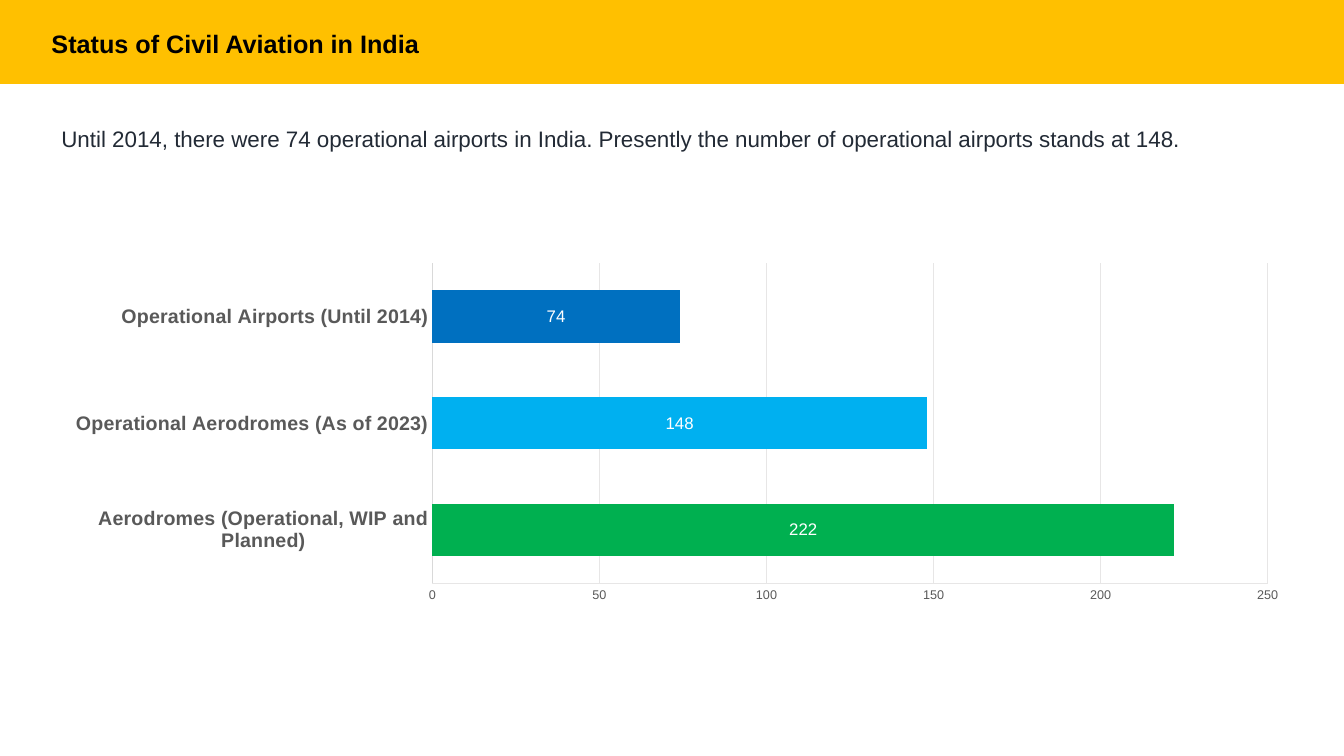
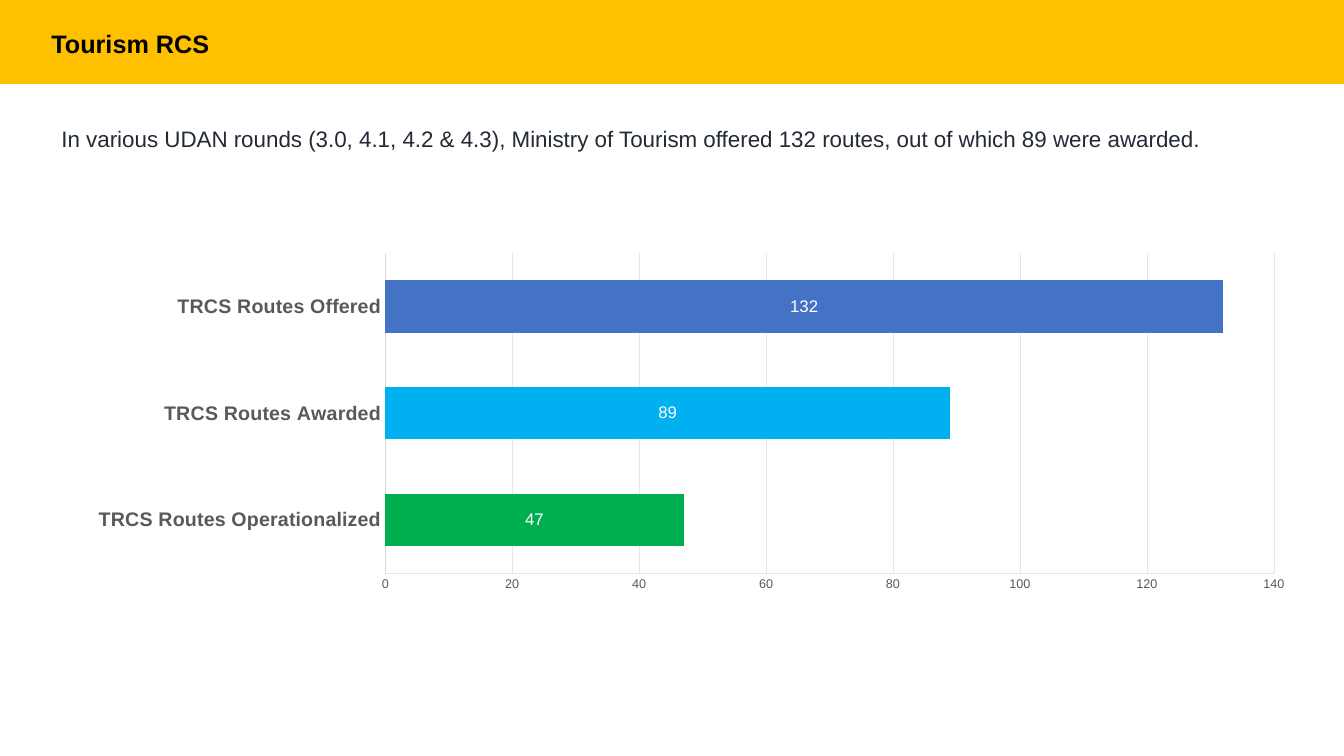
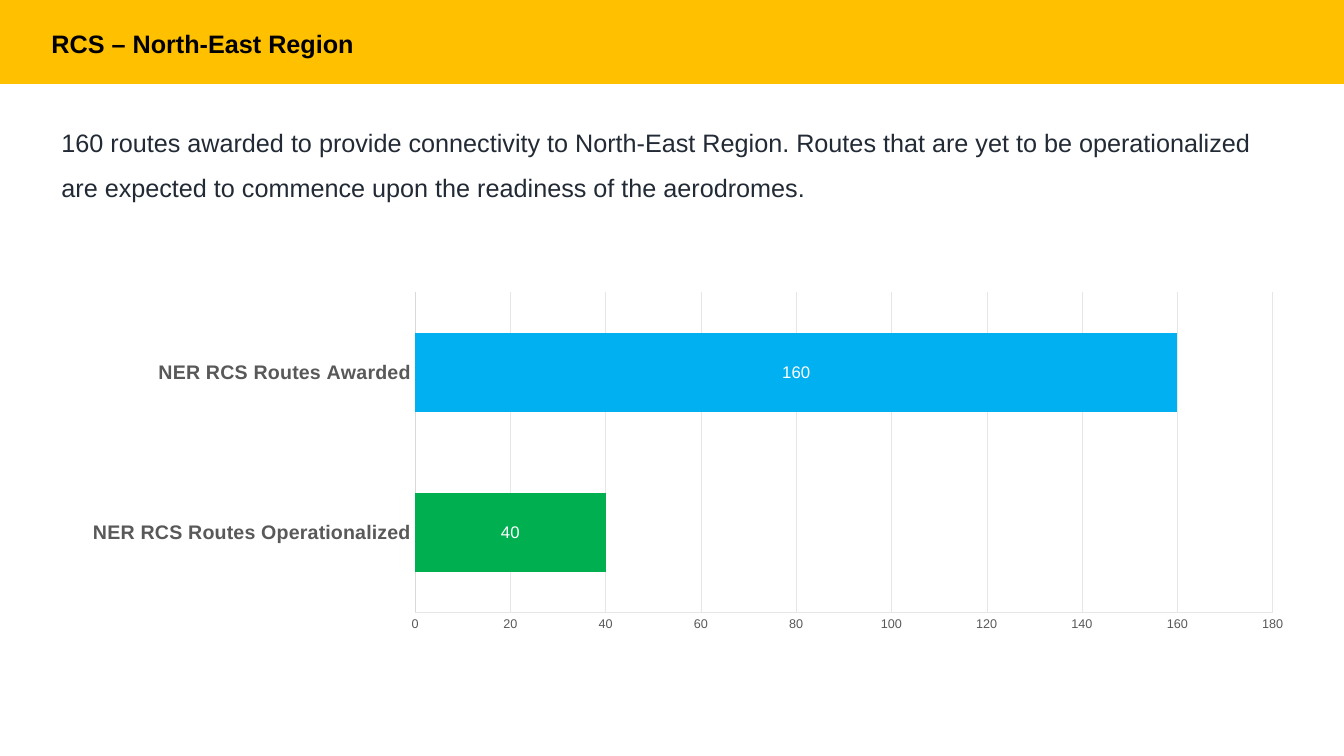
from lxml.etree import SubElement
from pptx import Presentation
from pptx.chart.data import CategoryChartData
from pptx.dml.color import RGBColor
from pptx.enum.chart import XL_CHART_TYPE as ChartType
from pptx.enum.chart import XL_LABEL_POSITION as LabelPosition
from pptx.enum.chart import XL_TICK_MARK as TickMark
from pptx.enum.shapes import MSO_SHAPE as Shape
from pptx.oxml import parse_xml
from pptx.oxml.ns import nsdecls, qn
from pptx.util import Pt

# Shared colours, fonts and measures (points)
GOLD, BLACK, WHITE, INK = "FFC000", "000000", "FFFFFF", "222A35"
GREY, AXIS, GRID = "595959", "D9D9D9", "E7E6E6"
GREEN, SKY, BLUE, INDIGO = "00B050", "00B0F0", "0070C0", "4472C4"

PAGE_WIDTH, PAGE_HEIGHT, BAND_HEIGHT = 960, 540, 60
MARGIN, CONTENT_WIDTH = 36.8, 886.4
TITLE_TOP, TITLE_HEIGHT = 20.2, 54.8
BODY_TOP, CHART_HEIGHT = 76.3, 311
PLOT_TOP, PLOT_HEIGHT = 0.088, 0.736

FONT = "Arial"
TITLE_FONT = {"size": 18, "color": BLACK, "bold": True}
CHART_FONT = {"size": 10, "color": BLACK}
CATEGORY_FONT = {"size": 14, "color": GREY, "bold": True}
VALUE_FONT = {"size": 9, "color": GREY}
LABEL_FONT = {"size": 12, "color": WHITE}


def rgb(value):
    return RGBColor.from_string(value)


def set_font(font, values):
    """Apply a dict of format values to a font."""
    for key, value in {"name": FONT, "bold": False, **values}.items():
        if key == "color":
            font.color.rgb = rgb(value)
        else:
            setattr(font, key, Pt(value) if key == "size" else value)


def set_line(line, color, width):
    line.color.rgb = rgb(color)
    line.width = Pt(width)


class DeckBuilder:
    def __init__(self):
        self.deck = Presentation()
        self.deck.slide_width = Pt(PAGE_WIDTH)
        self.deck.slide_height = Pt(PAGE_HEIGHT)
        self.page = None

    def add_page(self, title):
        self.page = self.deck.slides.add_slide(self.deck.slide_layouts[6])
        self.add_band()
        self.add_text(title, TITLE_TOP, TITLE_HEIGHT, TITLE_FONT, inset=(0, 0))

    def add_band(self):
        band = self.page.shapes.add_shape(
            Shape.RECTANGLE, 0, 0, Pt(PAGE_WIDTH), Pt(BAND_HEIGHT))
        band.shadow.inherit = False
        band.fill.solid()
        band.fill.fore_color.rgb = rgb(GOLD)
        band.line.fill.background()

    def add_text(self, text, top, height, font, inset=(7.2, 3.6), spacing=1.0):
        box = self.page.shapes.add_textbox(
            Pt(MARGIN), Pt(top), Pt(CONTENT_WIDTH), Pt(height))
        frame = box.text_frame
        frame.word_wrap = True
        frame.margin_left = frame.margin_right = Pt(inset[0])
        frame.margin_top = frame.margin_bottom = Pt(inset[1])
        para = frame.paragraphs[0]
        para.line_spacing = spacing
        span = para.add_run()
        span.text = text
        set_font(span.font, font)

    def add_bars(self, top, bars, plot_left, plot_width, maximum, step):
        """Draw bars of (category, value, colour), listed from the bottom up."""
        data = CategoryChartData(number_format="#,##0")
        data.categories = [category for category, _, _ in bars]
        data.add_series("Series 1", [value for _, value, _ in bars])
        chart = self.page.shapes.add_chart(
            ChartType.BAR_STACKED, Pt(MARGIN), Pt(top),
            Pt(CONTENT_WIDTH), Pt(CHART_HEIGHT), data).chart
        chart.has_legend = chart.has_title = False
        set_font(chart.font, CHART_FONT)
        self.place_plot(chart, plot_left, plot_width)

        # Axes
        axes = ((chart.category_axis, CATEGORY_FONT, AXIS, 0.75),
                (chart.value_axis, VALUE_FONT, GRID, 0.25))
        for axis, font, color, width in axes:
            axis.major_tick_mark = axis.minor_tick_mark = TickMark.NONE
            set_font(axis.tick_labels.font, font)
            set_line(axis.format.line, color, width)
        scale = chart.value_axis
        scale.minimum_scale, scale.maximum_scale = 0, maximum
        scale.major_unit = step
        scale.has_major_gridlines = True
        set_line(scale.major_gridlines.format.line, GRID, 0.25)

        # Bars and their labels
        plot = chart.plots[0]
        plot.gap_width, plot.overlap = 104, 100
        plot.vary_by_categories = False
        series = plot.series[0]
        series.format.fill.solid()
        series.format.fill.fore_color.rgb = rgb(INDIGO)
        for index, (_, _, color) in enumerate(bars):
            fill = series.points[index].format.fill
            fill.solid()
            fill.fore_color.rgb = rgb(color)
        labels = series.data_labels
        labels.show_value = True
        labels.position = LabelPosition.CENTER
        labels.number_format = "#,##0"
        labels.number_format_is_linked = False
        set_font(labels.font, LABEL_FONT)

    @staticmethod
    def place_plot(chart, left, width):
        """Fix the inner plot area, in fractions of the chart."""
        area = chart.element.find(".//" + qn("c:plotArea"))
        for old in area.findall(qn("c:layout")):
            area.remove(old)
        layout = parse_xml(f"<c:layout {nsdecls('c')}><c:manualLayout/></c:layout>")
        values = {"layoutTarget": "inner", "xMode": "edge", "yMode": "edge",
                  "x": left, "y": PLOT_TOP, "w": width, "h": PLOT_HEIGHT}
        for name, value in values.items():
            SubElement(layout[0], qn(f"c:{name}")).set("val", str(value))
        area.insert(0, layout)


PAGES = [
    {"title": "Status of Civil Aviation in India",
     "body": "Until 2014, there were 74 operational airports in India. "
             "Presently the number of operational airports stands at 148.",
     "body_size": 16, "body_height": 59.8,
     "chart": {"top": 160.6, "plot_left": 0.307, "plot_width": 0.673,
               "maximum": 250, "step": 50,
               "bars": [("Aerodromes (Operational, WIP and Planned)", 222, GREEN),
                        ("Operational Aerodromes (As of 2023)", 148, SKY),
                        ("Operational Airports (Until 2014)", 74, BLUE)]}},
    {"title": "Tourism RCS",
     "body": "In various UDAN rounds (3.0, 4.1, 4.2 & 4.3), Ministry of Tourism "
             "offered 132 routes, out of which 89 were awarded.",
     "body_size": 16, "body_height": 59.8,
     "chart": {"top": 153.4, "plot_left": 0.269, "plot_width": 0.716,
               "maximum": 140, "step": 20,
               "bars": [("TRCS Routes Operationalized", 47, GREEN),
                        ("TRCS Routes Awarded", 89, SKY),
                        ("TRCS Routes Offered", 132, INDIGO)]}},
    {"title": "RCS – North-East Region",
     "body": "160 routes awarded to provide connectivity to North-East Region. "
             "Routes that are yet to be operationalized are expected to commence "
             "upon the readiness of the aerodromes.",
     "body_size": 18, "body_height": 103.7,
     "chart": {"top": 181.4, "plot_left": 0.293, "plot_width": 0.691,
               "maximum": 180, "step": 20,
               "bars": [("NER RCS Routes Operationalized", 40, GREEN),
                        ("NER RCS Routes Awarded", 160, SKY)]}},
]


def main():
    builder = DeckBuilder()
    for content in PAGES:
        builder.add_page(content["title"])
        builder.add_bars(**content["chart"])
        builder.add_text(content["body"], BODY_TOP, content["body_height"],
                         {"size": content["body_size"], "color": INK}, spacing=1.5)
    builder.deck.save("out.pptx")


if __name__ == "__main__":
    main()
